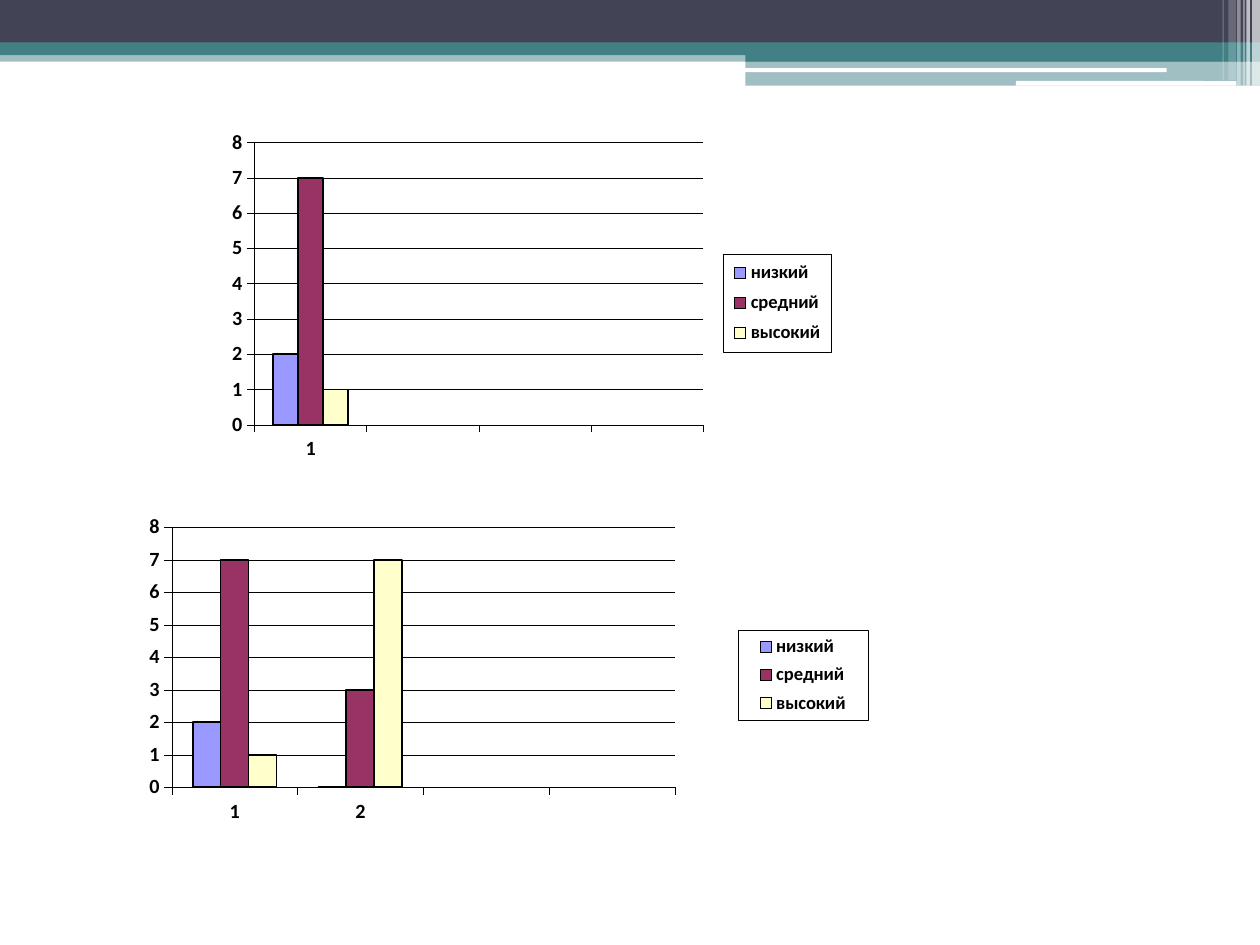
from lxml import etree
from pptx import Presentation
from pptx.chart.data import CategoryChartData
from pptx.dml.color import RGBColor
from pptx.enum import chart as ch, shapes
from pptx.oxml import parse_xml
from pptx.oxml.ns import nsdecls, qn
from pptx.util import Pt

THEME = {
    "navy": "424456", "teal": "438086", "white": "FFFFFF", "black": "000000",
    "levels": ["9999FF", "993366", "FFFFCC"],
    "font": "Calibri", "axis_size": 11.5, "legend_size": 10.6,
    "hairline": 0.25, "bar_line": 1,
}
LEVELS = ["низкий", "средний", "высокий"]


def set_font(font, size):
    for key, value in {"name": THEME["font"], "size": Pt(size), "bold": True}.items():
        setattr(font, key, value)
    font.color.rgb = RGBColor.from_string(THEME["black"])


def layout_xml(x, y, w, h, inner=False):
    target = '<c:layoutTarget val="inner"/>' if inner else ""
    return parse_xml(
        f'<c:layout {nsdecls("c")}><c:manualLayout>{target}'
        '<c:xMode val="edge"/><c:yMode val="edge"/>'
        f'<c:x val="{x}"/><c:y val="{y}"/><c:w val="{w}"/><c:h val="{h}"/>'
        '</c:manualLayout></c:layout>')


prs = Presentation()
prs.slide_width, prs.slide_height = Pt(720), Pt(540)
s = prs.slides.add_slide(prs.slide_layouts[6])

# Header bands and stripes: left, top, width, height, colour, opacity %, rounded
bands = [
    (0, 28.8, 720, 6.5, "teal", 50, False),
    (0, 0, 720, 24.5, "navy", 100, False),
    (0, 24.3, 720, 7.2, "teal", 100, False),
    (426, 28, 294, 7.2, "teal", 100, False),
    (426, 34.7, 294, 14.2, "teal", 50, False),
    (425.5, 39, 241.2, 2.2, "white", 100, True),
    (580.5, 46.3, 126, 2.7, "white", 100, True),
]
stripes = [(715.5, 4.5, 49, 65), (712.2, 2, 49, 65), (710.5, 0.7, 49, 60),
           (707, 2, 49, 40), (702, 4.3, 46, 20), (698.6, 0.7, 46, 30)]
bands += [(x, 0, w, h, "white", alpha, False) for x, w, h, alpha in stripes]

for x, y, w, h, color, alpha, rounded in bands:
    kind = shapes.MSO_SHAPE.ROUNDED_RECTANGLE if rounded else shapes.MSO_SHAPE.RECTANGLE
    sp = s.shapes.add_shape(kind, Pt(x), Pt(y), Pt(w), Pt(h))
    sp.shadow.inherit = False
    sp.line.fill.background()
    sp.fill.solid()
    sp.fill.fore_color.rgb = RGBColor.from_string(THEME[color])
    if alpha < 100:
        clr = sp.fill._xPr.find(".//" + qn("a:srgbClr"))
        etree.SubElement(clr, qn("a:alpha"), val=str(alpha * 1000))

# Charts: position, plot width share, categories, values per level
charts = [
    ((76.3, 287.3, 419.8, 193), 0.685, ["1", "2", "", ""],
     [(2, 0, None, None), (7, 3, None, None), (1, 7, None, None)]),
    ((127.4, 66.2, 347.8, 209.5), 0.737, ["1", "", "", ""],
     [(2, None, None, None), (7, None, None, None), (1, None, None, None)]),
]
for box, plot_width, cats, values in charts:
    data = CategoryChartData()
    data.categories = cats
    for name, vals in zip(LEVELS, values):
        data.add_series(name, vals)
    chart = s.shapes.add_chart(ch.XL_CHART_TYPE.COLUMN_CLUSTERED,
                               *[Pt(v) for v in box], data).chart
    chart.has_title = False
    set_font(chart.font, THEME["axis_size"])

    # Bars
    plot = chart.plots[0]
    plot.gap_width, plot.overlap, plot.vary_by_categories = 150, 0, False
    lines = []
    for ser, color in zip(plot.series, THEME["levels"]):
        ser.format.fill.solid()
        ser.format.fill.fore_color.rgb = RGBColor.from_string(color)
        ser.invert_if_negative = False
        lines.append((ser.format.line, THEME["bar_line"]))

    # Axes
    val, cat = chart.value_axis, chart.category_axis
    val.minimum_scale, val.maximum_scale, val.major_unit = 0, 8, 1
    val.has_major_gridlines = True
    cat.tick_label_position = ch.XL_TICK_LABEL_POSITION.LOW
    for axis in (val, cat):
        axis.major_tick_mark = ch.XL_TICK_MARK.OUTSIDE
        axis.minor_tick_mark = ch.XL_TICK_MARK.NONE
        set_font(axis.tick_labels.font, THEME["axis_size"])
        lines.append((axis.format.line, THEME["hairline"]))
    lines.append((val.major_gridlines.format.line, THEME["hairline"]))
    for line, width in lines:
        line.color.rgb = RGBColor.from_string(THEME["black"])
        line.width = Pt(width)

    # Legend with a thin frame
    chart.has_legend = True
    legend = chart.legend
    legend.position = ch.XL_LEGEND_POSITION.RIGHT
    legend.include_in_layout = False
    set_font(legend.font, THEME["legend_size"])
    overlay = legend._element.find(qn("c:overlay"))
    overlay.addprevious(layout_xml(0.823, 0.377, 0.178, 0.267))
    overlay.addnext(parse_xml(
        f'<c:spPr {nsdecls("c", "a")}>'
        f'<a:solidFill><a:srgbClr val="{THEME["white"]}"/></a:solidFill>'
        f'<a:ln w="{Pt(THEME["hairline"])}"><a:solidFill>'
        f'<a:srgbClr val="{THEME["black"]}"/></a:solidFill></a:ln></c:spPr>'))

    # Plot area position
    area = chart._chartSpace.find(".//" + qn("c:plotArea"))
    for old in area.findall(qn("c:layout")):
        area.remove(old)
    area.insert(0, layout_xml(0.052, 0.073, plot_width, 0.77, inner=True))

prs.save("out.pptx")
